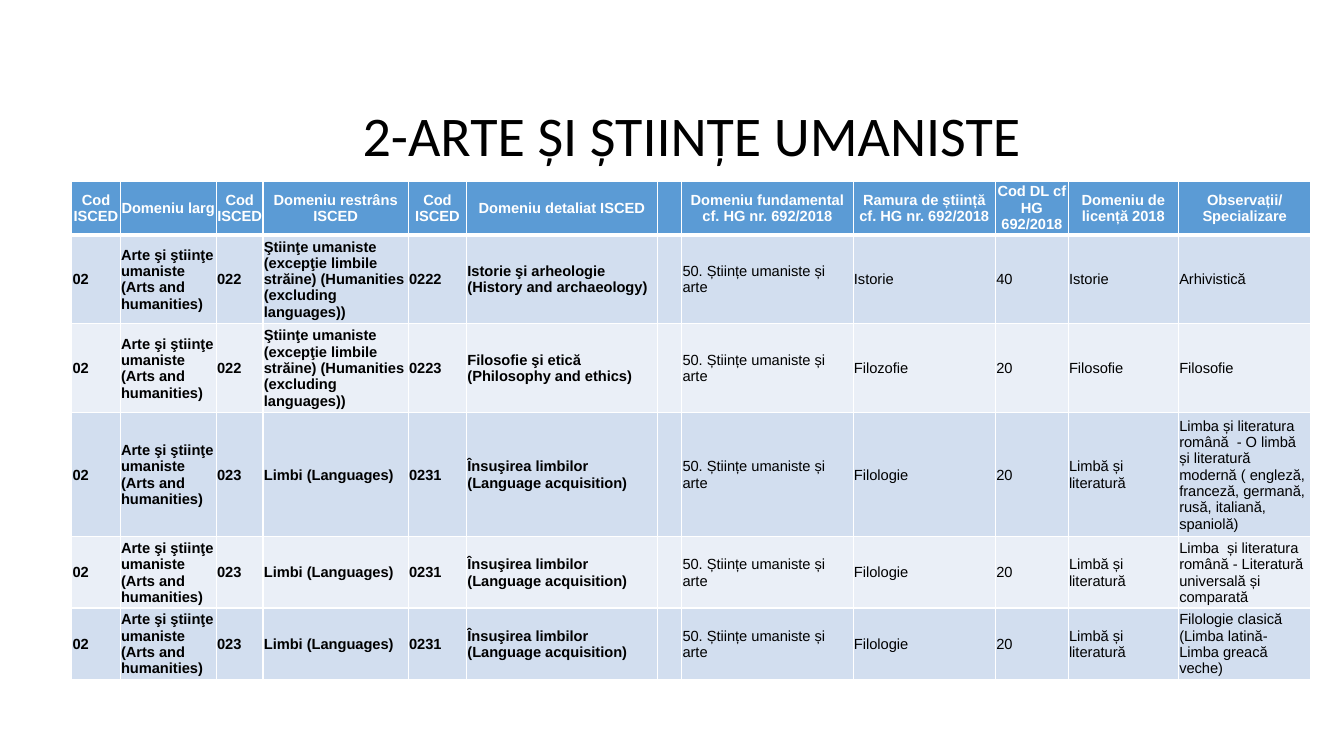
from lxml.etree import SubElement
from pptx import Presentation
from pptx.dml.color import RGBColor
from pptx.enum.text import MSO_ANCHOR as Anchor, PP_ALIGN as Align
from pptx.oxml.ns import qn
from pptx.util import Cm, Pt

# Content
HEADINGS = [
    "Cod ISCED", "Domeniu larg", "Cod ISCED", "Domeniu restrâns ISCED",
    "Cod ISCED", "Domeniu detaliat ISCED", "",
    "Domeniu fundamental cf. HG nr. 692/2018",
    "Ramura de știință cf. HG nr. 692/2018", "Cod DL cf HG 692/2018",
    "Domeniu de licență 2018", "Observații/ Specializare",
]
BROAD_FIELD = ["02", "Arte şi ştiinţe umaniste (Arts and humanities)"]
HUMANITIES = BROAD_FIELD + [
    "022", "Ştiinţe umaniste (excepţie limbile străine) (Humanities (excluding languages))"]
FUNDAMENTAL_FIELD = ["", "50. Științe umaniste și arte"]
LANGUAGES = BROAD_FIELD + [
    "023", "Limbi (Languages)", "0231", "Însuşirea limbilor (Language acquisition)",
    *FUNDAMENTAL_FIELD, "Filologie", "20", "Limbă și literatură"]
FIELDS = [
    HUMANITIES + ["0222", "Istorie şi arheologie (History and archaeology)",
                  *FUNDAMENTAL_FIELD, "Istorie", "40", "Istorie", "Arhivistică"],
    HUMANITIES + ["0223", "Filosofie şi etică (Philosophy and ethics)",
                  *FUNDAMENTAL_FIELD, "Filozofie", "20", "Filosofie", "Filosofie"],
    LANGUAGES + ["Limba și literatura română  - O limbă și literatură modernă "
                 "( engleză, franceză, germană, rusă, italiană, spaniolă)"],
    LANGUAGES + ["Limba  și literatura română - Literatură universală și comparată"],
    LANGUAGES + ["Filologie clasică (Limba latină- Limba greacă veche)"],
]
COLUMN_WIDTHS = [1.22, 2.42, 1.18, 3.66, 1.47, 4.8, 0.62, 4.32, 3.59, 1.83, 2.78, 3.34]
ROW_HEIGHTS = [1.32, 2.16, 2.16, 2.9, 1.75, 1.75]
ISCED_COLUMNS = 6


def color(hex_code):
    return RGBColor.from_string(hex_code)


def write(frame, text, size=10.5, font="Arial", ink="000000", bold=False,
          align=Align.LEFT, spacing=None):
    paragraph = frame.paragraphs[0]
    paragraph.alignment = align
    paragraph.line_spacing = spacing
    run = paragraph.add_run()
    run.text = text
    run.font.name, run.font.size, run.font.bold = font, Pt(size), bold
    run.font.color.rgb = color(ink)


class FieldSlide:
    header_fill = "5B9BD5"
    band_fills = ["D2DEEF", "EAEFF7"]
    white = "FFFFFF"

    def __init__(self, deck):
        self.slide = deck.slides.add_slide(deck.slide_layouts[6])

    def title(self, text, left, top, width, height):
        frame = self.slide.shapes.add_textbox(
            Cm(left), Cm(top), Cm(width), Cm(height)).text_frame
        frame.word_wrap = True
        frame.vertical_anchor = Anchor.MIDDLE
        write(frame, text, size=40, font="Calibri", align=Align.CENTER, spacing=0.9)

    def borders(self, cell, top=1, bottom=1):
        properties = cell._tc.get_or_add_tcPr()
        for side, width in (("L", 1), ("R", 1), ("T", top), ("B", bottom)):
            line = SubElement(properties, qn(f"a:ln{side}"), w=str(Pt(width)))
            SubElement(SubElement(line, qn("a:solidFill")), qn("a:srgbClr"), val=self.white)

    def cell(self, cell, text, fill, margin, top=1, bottom=1, **style):
        self.borders(cell, top, bottom)
        cell.fill.solid()
        cell.fill.fore_color.rgb = color(fill)
        cell.vertical_anchor = Anchor.MIDDLE
        cell.margin_left = cell.margin_right = cell.margin_top = Cm(margin)
        cell.margin_bottom = 0
        if text:
            write(cell.text_frame, text, **style)

    def table(self, left, top):
        table = self.slide.shapes.add_table(
            len(ROW_HEIGHTS), len(COLUMN_WIDTHS), Cm(left), Cm(top),
            Cm(sum(COLUMN_WIDTHS)), Cm(sum(ROW_HEIGHTS))).table
        table.first_row = table.horz_banding = False
        for column, width in zip(table.columns, COLUMN_WIDTHS):
            column.width = Cm(width)
        for row, height in zip(table.rows, ROW_HEIGHTS):
            row.height = Cm(height)

        # Header row
        for c, heading in enumerate(HEADINGS):
            self.cell(table.cell(0, c), heading, self.header_fill, 0, bottom=3,
                      ink=self.white, bold=True, align=Align.CENTER)

        # Banded rows, with the ISCED columns in bold
        for r, field in enumerate(FIELDS, start=1):
            for c, text in enumerate(field):
                self.cell(table.cell(r, c), text, self.band_fills[(r - 1) % 2], 0.02,
                          top=3 if r == 1 else 1, bold=c < ISCED_COLUMNS,
                          align=Align.JUSTIFY if text == "022" else Align.LEFT)


def main():
    deck = Presentation()
    deck.slide_width, deck.slide_height = Cm(33.87), Cm(19.05)
    fields = FieldSlide(deck)
    fields.title("2-ARTE ȘI ȘTIINȚE UMANISTE", 2.82, 2.62, 29.21, 1.73)
    fields.table(1.81, 4.58)
    deck.save("out.pptx")


if __name__ == "__main__":
    main()
